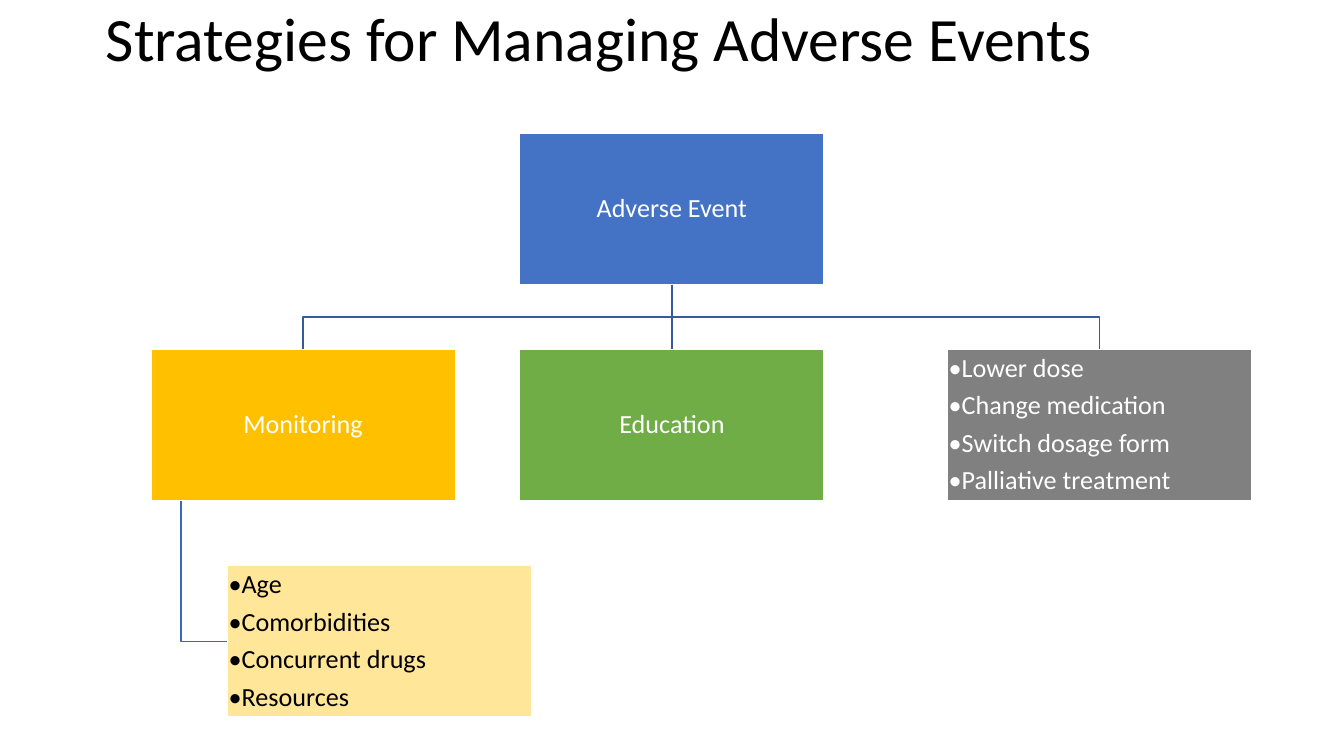
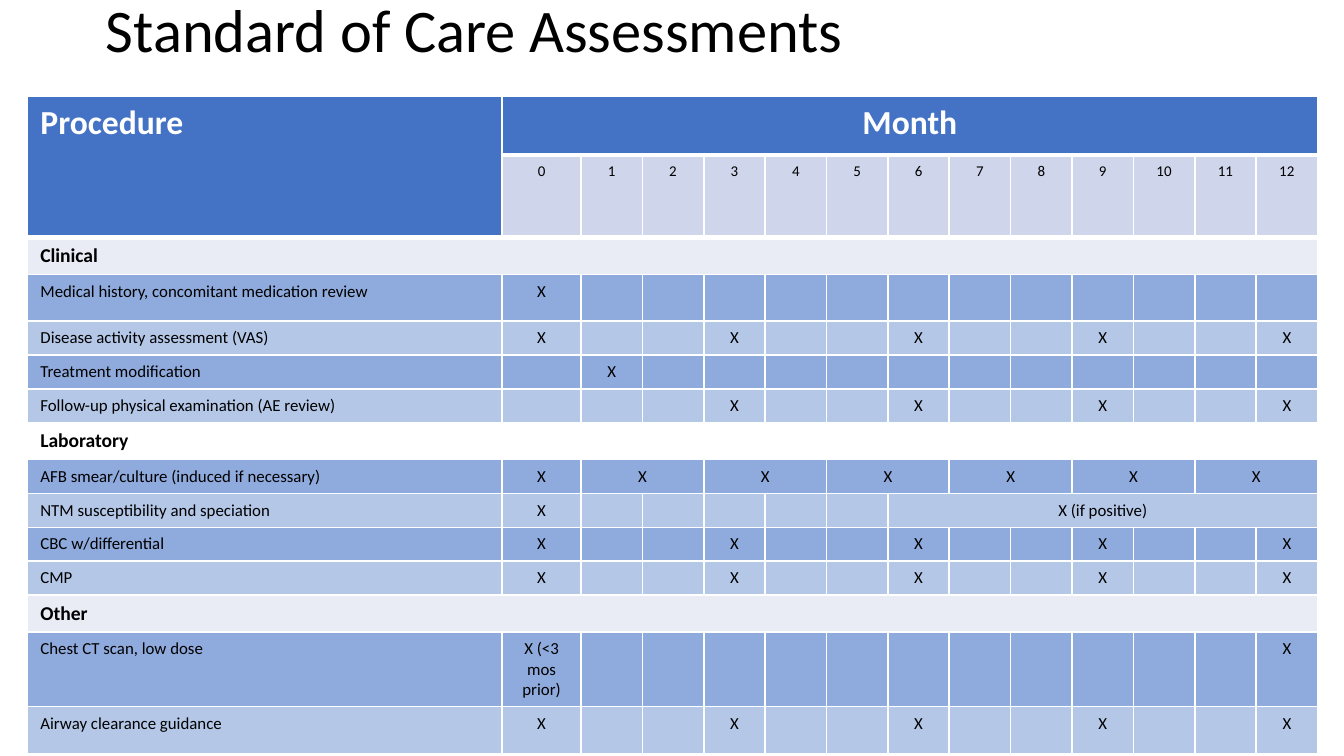
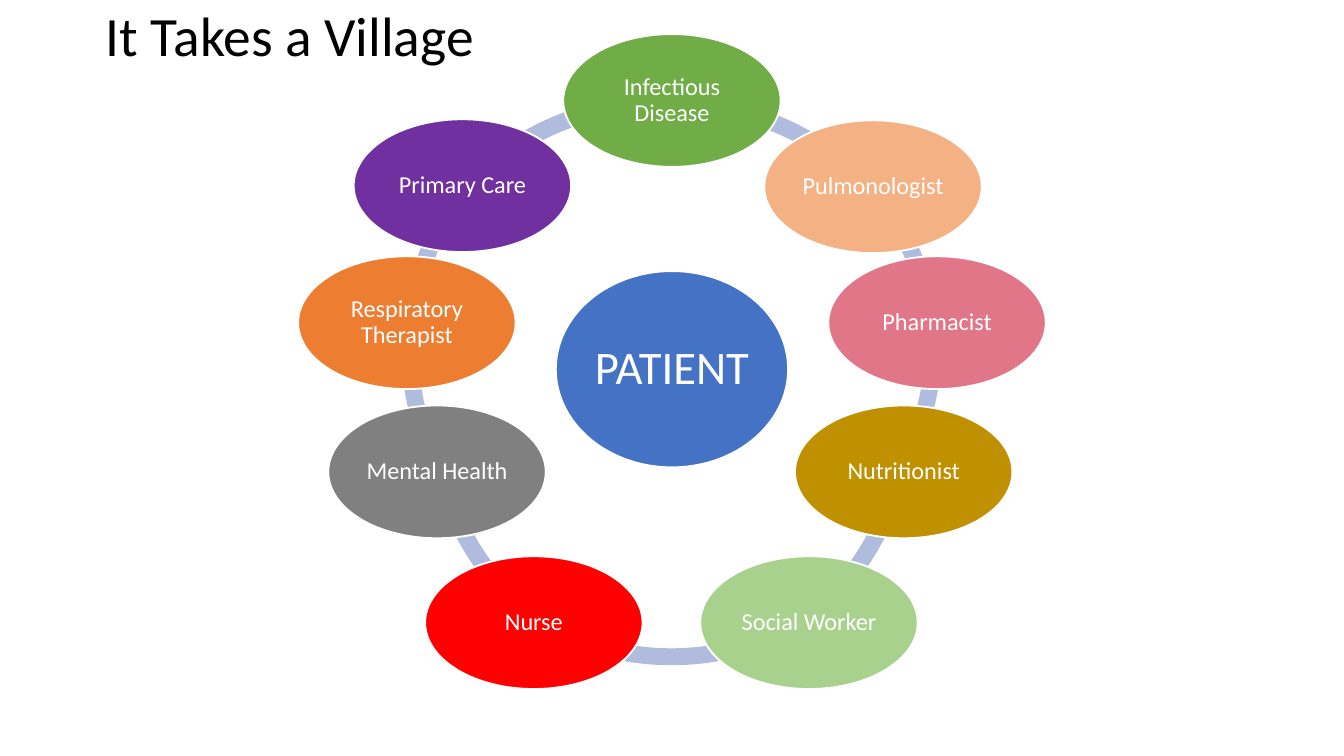
import math

import lxml.etree
import pptx
import pptx.dml.color
import pptx.enum.shapes
import pptx.enum.text
import pptx.oxml.ns
import pptx.util


class Theme:
    font = "Calibri"
    black, white = "000000", "FFFFFF"
    blue, green, gray, gold = "4472C4", "70AD47", "808080", "FFC000"
    branch, side_branch = "365B9D", "3E67B2"
    pale_gold = "FFE699"
    ring = "B0BCDE"
    month_fill = "CFD5EA"
    section_fills = ("E9EBF5", "FFFFFF")
    procedure_fills = ("8FAADC", "B4C7E7")
    box_size, member_size, patient_size = 14, 13, 25
    header_size, month_size, section_size, procedure_size = 18, 8, 10.5, 9
    thin, thick = 1, 3


SLIDE_SIZE = (25.4, 14.29)
ANCHOR_MIDDLE = pptx.enum.text.MSO_ANCHOR.MIDDLE
LEFT = pptx.enum.text.PP_ALIGN.LEFT
CENTER = pptx.enum.text.PP_ALIGN.CENTER
SHAPES = pptx.enum.shapes.MSO_SHAPE

# title: text, top, height, size
STRATEGIES_TITLE = ("Strategies for Managing Adverse Events", -0.04, 1.65, 33)
CARE_TITLE = ("Standard of Care Assessments", 0.03, 1.19, 32.4)
VILLAGE_TITLE = ("It Takes a Village", 0.05, 1.37, 29.7)

# strategy boxes: lines, left, level, fill, text colour
BOX_SIZE = (5.76, 2.87)
FIRST_LEVEL_TOP, LEVEL_STEP = 2.51, 4.09
EVENT = (["Adverse Event"], 9.82, 0, Theme.blue, Theme.white)
MONITORING = (["Monitoring"], 2.85, 1, Theme.gold, Theme.white)
EDUCATION = (["Education"], 9.82, 1, Theme.green, Theme.white)
TREATMENT = (["•Lower dose", "•Change medication", "•Switch dosage form",
              "•Palliative treatment"], 17.9, 1, Theme.gray, Theme.white)
FACTORS = (["•Age", "•Comorbidities", "•Concurrent drugs", "•Resources"],
           4.29, 2, Theme.pale_gold, Theme.black)

# marks: first month, last month, text
MONTHS = range(13)
BASELINE = [(0, 0, "X")]
QUARTERLY = [(month, month, "X") for month in MONTHS[::3]]
BIMONTHLY = [(month, month + 1, "X") for month in MONTHS[1::2]]
# procedures: name, marks, row height
SECTIONS = [
    ("Clinical", [
        ("Medical history, concomitant medication review", BASELINE, 0.88),
        ("Disease activity assessment (VAS)", QUARTERLY, 0.64),
        ("Treatment modification", [(1, 1, "X")], 0.64),
        ("Follow-up physical examination (AE review)", QUARTERLY[1:], 0.64),
    ]),
    ("Laboratory", [
        ("AFB smear/culture (induced if necessary)", BASELINE + BIMONTHLY, 0.64),
        ("NTM susceptibility and speciation", BASELINE + [(6, 12, "X (if positive)")], 0.64),
        ("CBC w/differential", QUARTERLY, 0.64),
        ("CMP", QUARTERLY, 0.64),
    ]),
    ("Other", [
        ("Chest CT scan, low dose", [(0, 0, "X (<3 mos prior)"), (12, 12, "X")], 1.41),
        ("Airway clearance guidance", QUARTERLY, 0.89),
    ]),
]
TABLE_LEFT, TABLE_TOP = 0.51, 1.81
COLUMN_WIDTHS = [8.98, 1.49] + [1.16] * 12
HEADER_HEIGHTS, SECTION_HEIGHT = [1.12, 1.56], 0.64

# care team, clockwise: role, centre x, centre y, fill
TEAM = [
    ("Infectious Disease", 12.7, 1.9, Theme.green),
    ("Pulmonologist", 16.5, 3.53, "F4B183"),
    ("Pharmacist", 17.71, 6.1, "E07688"),
    ("Nutritionist", 17.08, 8.92, "BF9000"),
    ("Social Worker", 15.29, 11.77, "A9D18E"),
    ("Nurse", 10.09, 11.77, "FF0000"),
    ("Mental Health", 8.26, 8.92, Theme.gray),
    ("Respiratory Therapist", 7.69, 6.1, "ED7D31"),
    ("Primary Care", 8.74, 3.51, "7030A0"),
]
MEMBER_SIZE, PATIENT_SIZE = (4.11, 2.51), (4.39, 3.71)
PATIENT_CENTER = (12.7, 6.98)
RING_RADIUS, RING_OUTER_RADIUS, RING_THICKNESS = 5.08, 5.17, 0.031


def rgb(color):
    return pptx.dml.color.RGBColor.from_string(color)


def cm(*lengths):
    return [pptx.util.Cm(length) for length in lengths]


def add_xml(parent, tag, **attributes):
    return lxml.etree.SubElement(parent, pptx.oxml.ns.qn(tag), attributes)


def write(paragraph, text, size, color, align=LEFT, bold=False):
    paragraph.alignment = align
    run = paragraph.add_run()
    run.text = text
    run.font.name = Theme.font
    run.font.size = pptx.util.Pt(size)
    run.font.bold = bold
    run.font.color.rgb = rgb(color)


def set_insets(frame, side, end):
    frame.margin_left = frame.margin_right = pptx.util.Cm(side)
    frame.margin_top = frame.margin_bottom = pptx.util.Cm(end)
    frame.word_wrap = True
    frame.vertical_anchor = ANCHOR_MIDDLE


def add_slide(deck, title):
    text, top, height, size = title
    slide = deck.slides.add_slide(deck.slide_layouts[6])
    heading = slide.shapes.add_textbox(*cm(1.75, top, 21.9, height)).text_frame
    set_insets(heading, 0.25, 0)
    heading.paragraphs[0].line_spacing = 0.9
    write(heading.paragraphs[0], text, size, Theme.black)
    return slide


def add_node(slide, kind, area, fill, lines, size, color=Theme.white, inset=0.03):
    """Draw a white-edged shape; several lines become a left-aligned list."""
    node = slide.shapes.add_shape(kind, *cm(*area))
    node.shadow.inherit = False
    node.fill.solid()
    node.fill.fore_color.rgb = rgb(fill)
    node.line.color.rgb = rgb(Theme.white)
    node.line.width = pptx.util.Pt(Theme.thin)
    frame = node.text_frame
    set_insets(frame, inset, inset)
    listed = len(lines) > 1
    for index, line in enumerate(lines):
        paragraph = frame.add_paragraph() if index else frame.paragraphs[0]
        paragraph.line_spacing = 0.9
        paragraph.space_after = pptx.util.Pt(5 if listed else 0)
        write(paragraph, line, size, color, LEFT if listed else CENTER)
    return node


def add_strategy(slide, strategy):
    lines, left, level, fill, color = strategy
    area = (left, FIRST_LEVEL_TOP + level * LEVEL_STEP, *BOX_SIZE)
    return add_node(slide, SHAPES.RECTANGLE, area, fill, lines, Theme.box_size, color)


def style_branch(branch, color):
    branch.line.color.rgb = rgb(color)
    branch.line.width = pptx.util.Pt(Theme.thin)


def add_bent_branch(slide, points, color):
    builder = slide.shapes.build_freeform(*points[0])
    builder.add_line_segments(points[1:], close=False)
    branch = builder.convert_to_shape()
    branch.shadow.inherit = False
    branch.fill.background()
    style_branch(branch, color)


def build_strategies(deck):
    slide = add_slide(deck, STRATEGIES_TITLE)
    event, monitoring, education, treatment, factors = [
        add_strategy(slide, strategy)
        for strategy in (EVENT, MONITORING, EDUCATION, TREATMENT, FACTORS)]
    event_x, event_bottom = event.left + event.width // 2, event.top + event.height
    bend = (event_bottom + education.top) // 2
    for child in (monitoring, treatment):
        child_x = child.left + child.width // 2
        add_bent_branch(slide, [(event_x, event_bottom), (event_x, bend),
                                (child_x, bend), (child_x, child.top)], Theme.branch)
    trunk = slide.shapes.add_connector(pptx.enum.shapes.MSO_CONNECTOR.STRAIGHT, 0, 0, 0, 0)
    trunk.begin_connect(event, 2)
    trunk.end_connect(education, 0)
    style_branch(trunk, Theme.branch)
    add_xml(trunk._element.spPr, "a:effectLst")

    side_x = monitoring.left + monitoring.width // 10
    factors_y = factors.top + factors.height // 2
    add_bent_branch(slide, [(side_x, monitoring.top + monitoring.height),
                            (side_x, factors_y), (factors.left, factors_y)], Theme.side_branch)


def style_cell(cell, row, fill, size):
    properties = cell._tc.get_or_add_tcPr()
    widths = {"a:lnL": Theme.thin, "a:lnR": Theme.thin,
              "a:lnT": Theme.thick if row in (1, 2) else Theme.thin,
              "a:lnB": Theme.thick if row in (0, 1) else Theme.thin}
    for edge, width in widths.items():
        line = add_xml(properties, edge, w=str(pptx.util.Pt(width)))
        add_xml(add_xml(line, "a:solidFill"), "a:srgbClr", val=Theme.white)
    cell.fill.solid()
    cell.fill.fore_color.rgb = rgb(fill)
    # Empty cells need a type size too, or they stretch their row.
    add_xml(cell.text_frame.paragraphs[0]._p, "a:endParaRPr", sz=str(int(size * 100)))


def style_row(table, row, fill, size):
    for cell in table.rows[row].cells:
        style_cell(cell, row, fill, size)


def fill_cell(cell, text, size, color=Theme.black, align=LEFT, bold=False):
    write(cell.text_frame.paragraphs[0], text, size, color, align, bold)


def write_header(table):
    style_row(table, 0, Theme.blue, Theme.header_size)
    style_cell(table.cell(1, 0), 1, Theme.blue, Theme.month_size)
    table.cell(0, 0).merge(table.cell(1, 0))
    table.cell(0, 1).merge(table.cell(0, len(MONTHS)))
    fill_cell(table.cell(0, 0), "Procedure", Theme.header_size, Theme.white, bold=True)
    fill_cell(table.cell(0, 1), "Month", Theme.header_size, Theme.white, CENTER, True)
    for month in MONTHS:
        cell = table.cell(1, month + 1)
        style_cell(cell, 1, Theme.month_fill, Theme.month_size)
        fill_cell(cell, str(month), Theme.month_size, align=CENTER)


def write_procedure(table, row, name, marks, fill):
    style_row(table, row, fill, Theme.procedure_size)
    fill_cell(table.cell(row, 0), name, Theme.procedure_size)
    for first, last, mark in marks:
        cell = table.cell(row, first + 1)
        if last > first:
            cell.merge(table.cell(row, last + 1))
        fill_cell(cell, mark, Theme.procedure_size, align=CENTER)


def build_assessments(deck):
    slide = add_slide(deck, CARE_TITLE)
    heights = list(HEADER_HEIGHTS)
    for _, procedures in SECTIONS:
        heights += [SECTION_HEIGHT] + [height for _, _, height in procedures]
    table = slide.shapes.add_table(
        len(heights), len(COLUMN_WIDTHS),
        *cm(TABLE_LEFT, TABLE_TOP, sum(COLUMN_WIDTHS), sum(heights))).table
    table.first_row = table.horz_banding = False
    for column, width in zip(table.columns, COLUMN_WIDTHS):
        column.width = pptx.util.Cm(width)
    for table_row, height in zip(table.rows, heights):
        table_row.height = pptx.util.Cm(height)

    write_header(table)
    row = len(HEADER_HEIGHTS)
    for number, (section, procedures) in enumerate(SECTIONS):
        style_row(table, row, Theme.section_fills[number % 2], Theme.section_size)
        table.cell(row, 0).merge(table.cell(row, len(MONTHS)))
        fill_cell(table.cell(row, 0), section, Theme.section_size, bold=True)
        for index, (name, marks, _) in enumerate(procedures):
            fill = Theme.procedure_fills[index % 2]
            write_procedure(table, row + 1 + index, name, marks, fill)
        row += 1 + len(procedures)


def add_ring_arc(slide, start, end):
    """Join two centres clockwise by an arc of the ring's radius."""
    (x1, y1), (x2, y2) = start, end
    chord = math.dist(start, end)
    reach = math.sqrt(RING_RADIUS ** 2 - (chord / 2) ** 2) / chord
    x = (x1 + x2) / 2 - (y2 - y1) * reach
    y = (y1 + y2) / 2 + (x2 - x1) * reach
    side = 2 * RING_OUTER_RADIUS
    arc = slide.shapes.add_shape(
        SHAPES.BLOCK_ARC, *cm(x - RING_OUTER_RADIUS, y - RING_OUTER_RADIUS, side, side))
    for index, (px, py) in enumerate((start, end)):
        angle = math.degrees(math.atan2(py - y, px - x)) % 360
        arc.adjustments[index] = angle * 0.6  # 60000 units a degree, scaled by 100000
    arc.adjustments[2] = RING_THICKNESS
    arc.shadow.inherit = False
    arc.fill.solid()
    arc.fill.fore_color.rgb = rgb(Theme.ring)
    arc.line.fill.background()


def add_person(slide, role, center, extent, fill, size):
    (x, y), (width, height) = center, extent
    area = (x - width / 2, y - height / 2, width, height)
    add_node(slide, SHAPES.OVAL, area, fill, [role], size, inset=0.05)


def build_village(deck):
    slide = add_slide(deck, VILLAGE_TITLE)
    centers = [(x, y) for _, x, y, _ in TEAM]
    for start, end in zip(centers, centers[1:] + centers[:1]):
        add_ring_arc(slide, start, end)
    add_person(slide, "PATIENT", PATIENT_CENTER, PATIENT_SIZE, Theme.blue, Theme.patient_size)
    for role, x, y, fill in TEAM:
        add_person(slide, role, (x, y), MEMBER_SIZE, fill, Theme.member_size)


def main():
    deck = pptx.Presentation()
    deck.slide_width, deck.slide_height = cm(*SLIDE_SIZE)
    build_strategies(deck)
    build_assessments(deck)
    build_village(deck)
    deck.save("out.pptx")


if __name__ == "__main__":
    main()
